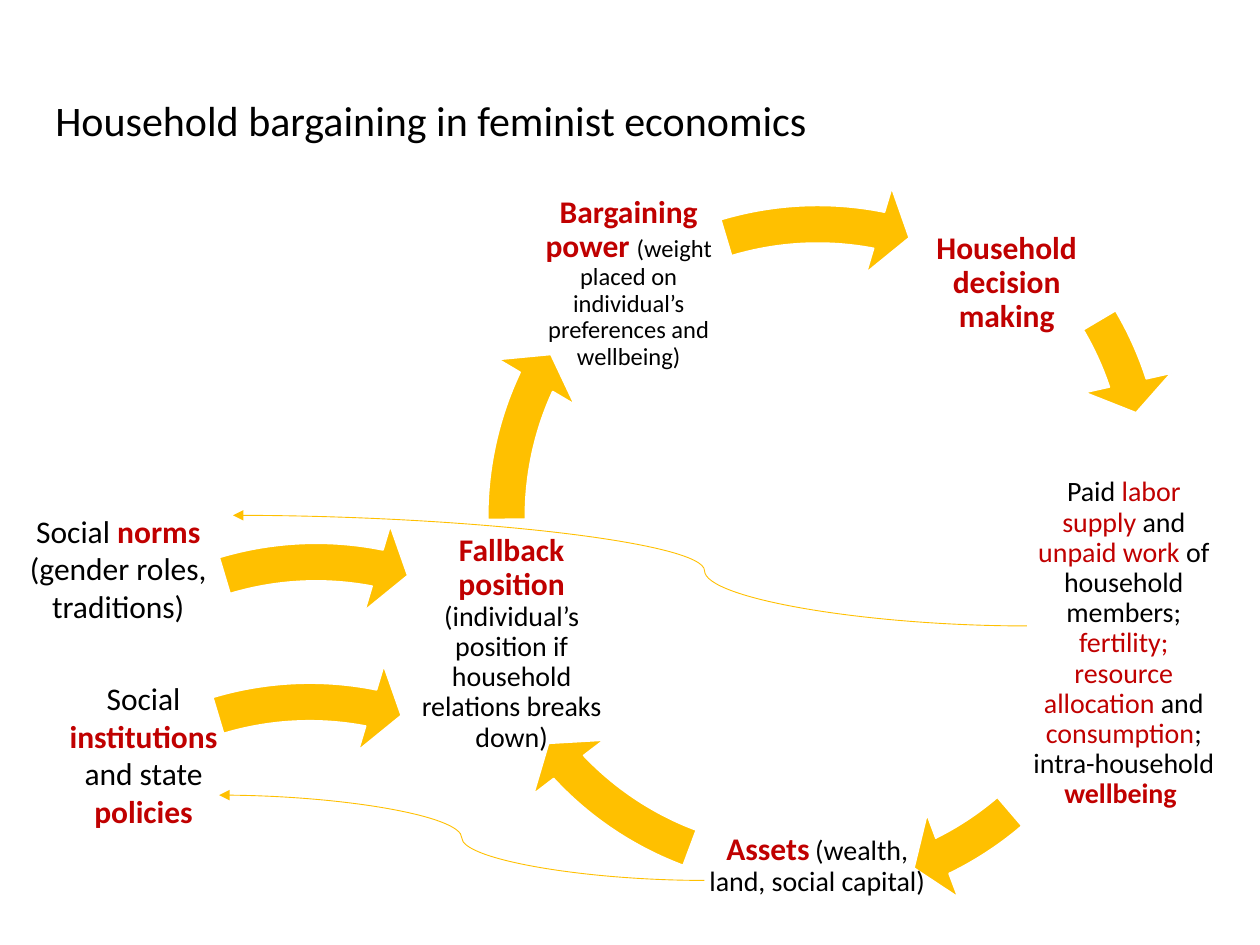
"""Build the slide on household bargaining in feminist economics."""
from lxml.etree import SubElement
from pptx import Presentation
from pptx.dml.color import RGBColor
from pptx.enum.shapes import MSO_CONNECTOR, MSO_SHAPE
from pptx.enum.text import MSO_ANCHOR, PP_ALIGN
from pptx.oxml.ns import qn
from pptx.util import Cm, Pt

BLACK = RGBColor(0x00, 0x00, 0x00)
RED = RGBColor(0xC0, 0x00, 0x00)
GOLD = RGBColor(0xFF, 0xC0, 0x00)
WHITE = RGBColor(0xFF, 0xFF, 0xFF)
RING_SIZE = 14.63
DEGREE = 0.6


def write_runs(frame, runs, align=PP_ALIGN.CENTER, anchor=MSO_ANCHOR.MIDDLE, spacing=None, inset=None):
    frame.word_wrap = True
    frame.vertical_anchor = anchor
    if inset is not None:
        frame.margin_left = frame.margin_right = Cm(inset)
        frame.margin_top = frame.margin_bottom = Cm(inset)
    paragraph = frame.paragraphs[0]
    paragraph.alignment = align
    paragraph.space_before = Pt(0)
    if spacing:
        paragraph.line_spacing = spacing
    for text, size, color, bold in runs:
        run = paragraph.add_run()
        run.text = text
        run.font.name = "Calibri"
        run.font.size = Pt(size)
        run.font.bold = bold
        run.font.color.rgb = color


presentation = Presentation()
presentation.slide_width, presentation.slide_height = Cm(25.4), Cm(19.05)
slide = presentation.slides.add_slide(presentation.slide_layouts[5])

heading = slide.shapes.title
heading.left, heading.top, heading.width, heading.height = Cm(0.86), Cm(1.75), Cm(19.23), Cm(1.32)
write_runs(heading.text_frame, [("Household bargaining in feminist economics", 24, BLACK, False)],
           align=PP_ALIGN.LEFT)

cycle_arrows = [
    (9.32, 2.41, 329.4, 341.8),
    (8.86, 4.17, 49.4, 63.9),
    (8.84, 3.76, 110.5, 136.9),
    (9.32, 3.10, 179.5, 205),
    (9.17, 3.63, 253.3, 281.1),
    (-0.94, 10.44, 253.3, 281.1),
    (-1.07, 13.26, 253.3, 281.1),
]
for left, top, start, end in cycle_arrows:
    arrow = slide.shapes.add_shape(MSO_SHAPE.CIRCULAR_ARROW, Cm(left), Cm(top), Cm(RING_SIZE), Cm(RING_SIZE))
    arrow.shadow.inherit = False
    arrow.fill.solid()
    arrow.fill.fore_color.rgb = GOLD
    arrow.line.color.rgb = WHITE
    arrow.line.width = Pt(1)
    adjustments = (5.2 / 100, 5.6 * DEGREE, end * DEGREE, start * DEGREE, 6.1 / 100)
    for index, value in enumerate(adjustments):
        arrow.adjustments[index] = value

cycle_stages = [
    (18.34, 3.76, 3.91, 3.91, [("Household decision making", 18, RED, True)]),
    (20.7, 9.55, 3.91, 6.86, [
        ("Paid ", 16, BLACK, False), ("labor supply ", 16, RED, False),
        ("and ", 16, BLACK, False), ("unpaid work ", 16, RED, False),
        ("of household members; ", 16, BLACK, False),
        ("fertility; resource allocation ", 16, RED, False),
        ("and ", 16, BLACK, False), ("consumption", 16, RED, False),
        ("; intra-household ", 16, BLACK, False), ("wellbeing ", 16, RED, True)]),
    (14.2, 15.85, 4.55, 3.2, [
        ("Assets", 18, RED, True), (" ", 14, BLACK, False),
        ("(wealth, land, social capital)", 16, BLACK, False)]),
    (8.36, 11.02, 3.91, 3.91, [
        ("Fallback position ", 18, RED, True),
        ("(individual’s position if household relations breaks down)", 16, BLACK, False)]),
    (10.72, 3.76, 3.91, 3.91, [
        ("Bargaining power ", 18, RED, True),
        ("(weight placed on individual’s preferences and wellbeing)", 14, BLACK, False)]),
]
for left, top, width, height, runs in cycle_stages:
    stage = slide.shapes.add_textbox(Cm(left), Cm(top), Cm(width), Cm(height))
    write_runs(stage.text_frame, runs, spacing=0.9, inset=0.07)

social_factors = [
    (0.66, 13.56, 3.33, [
        ("Social ", 18, BLACK, False), ("institutions", 18, RED, True),
        (" and state ", 18, BLACK, False), ("policies", 18, RED, True)]),
    (0.15, 10.19, 2.57, [
        ("Social ", 18, BLACK, False), ("norms ", 18, RED, True),
        ("(gender roles, traditions)", 18, BLACK, False)]),
]
for left, top, height, runs in social_factors:
    factor = slide.shapes.add_textbox(Cm(left), Cm(top), Cm(4.47), Cm(height))
    write_runs(factor.text_frame, runs, anchor=MSO_ANCHOR.TOP)

feedback_links = [
    (20.7, 12.62, 4.7, 10.39, 40600),
    (14.2, 17.75, 4.42, 16.03, 50000),
]
for from_x, from_y, to_x, to_y, bend in feedback_links:
    feedback = slide.shapes.add_connector(MSO_CONNECTOR.CURVE, Cm(from_x), Cm(from_y), Cm(to_x), Cm(to_y))
    feedback.line.color.rgb = GOLD
    feedback.line.width = Pt(0.5)
    properties = feedback._element.spPr
    guides = properties.find(qn("a:prstGeom")).find(qn("a:avLst"))
    SubElement(guides, qn("a:gd"), name="adj1", fmla=f"val {bend}")
    SubElement(properties.find(qn("a:ln")), qn("a:tailEnd"), type="triangle")
    SubElement(properties, qn("a:effectLst"))

presentation.save("out.pptx")
